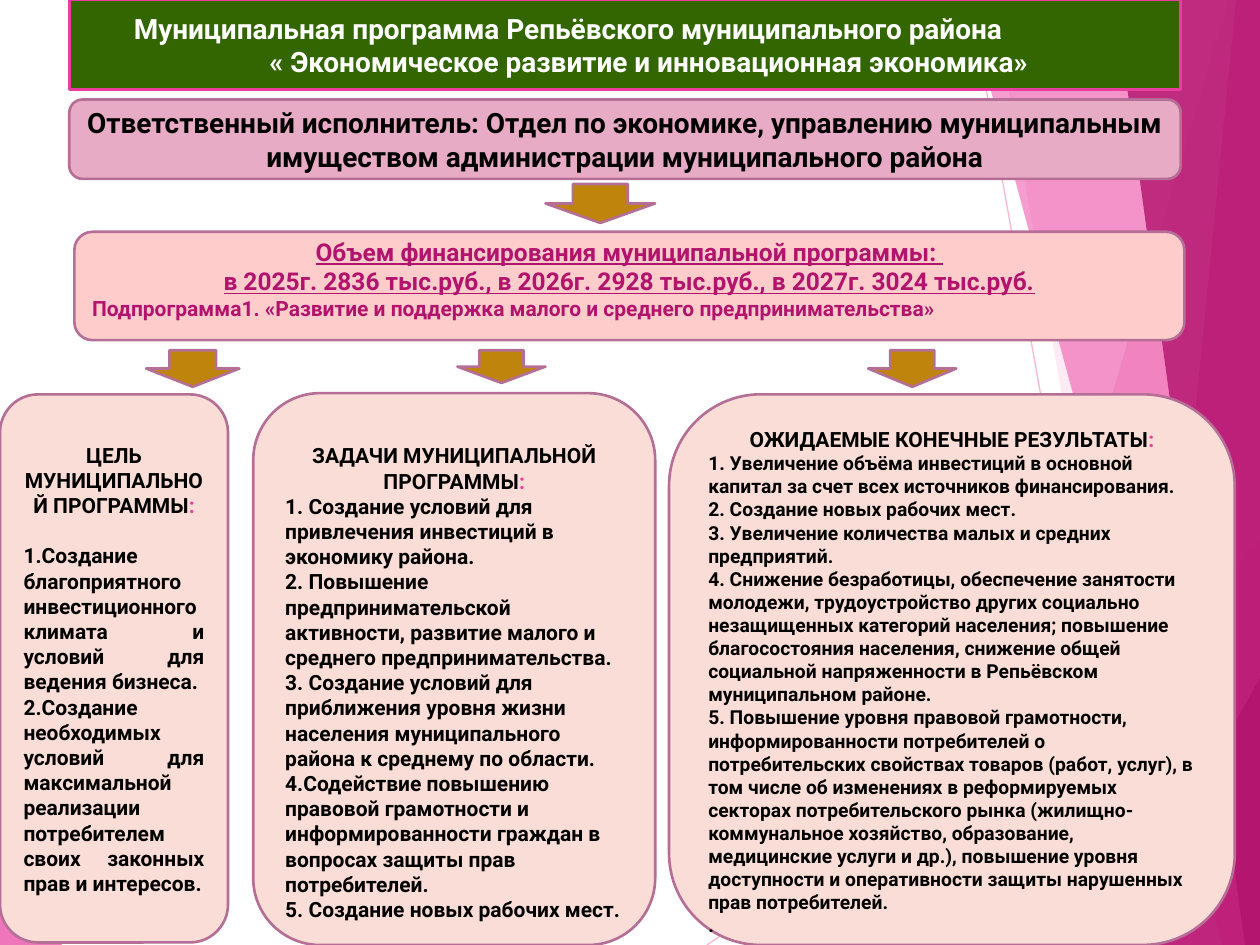
from dataclasses import dataclass, field

from lxml import etree
from pptx import Presentation
from pptx import util as u
from pptx.dml.color import RGBColor
from pptx.enum import shapes, text
from pptx.oxml.ns import qn

FONT = "Roboto"
COLORS = {
    "white": "FFFFFF", "black": "000000", "green": "336600",
    "light_pink": "F496CB", "pink": "EB3D9F", "magenta": "B2136D",
    "mauve": "E7ABC5", "border": "B56F96", "rose": "FFCCCC",
    "peach": "FADDD6", "ochre": "BE840B",
}
CENTER, LEFT, JUSTIFY = text.PP_ALIGN.CENTER, text.PP_ALIGN.LEFT, text.PP_ALIGN.JUSTIFY
TOP, MIDDLE = text.MSO_ANCHOR.TOP, text.MSO_ANCHOR.MIDDLE
RECTANGLE, ROUNDED = shapes.MSO_SHAPE.RECTANGLE, shapes.MSO_SHAPE.ROUNDED_RECTANGLE


@dataclass
class Line:
    words: str
    size: float = 12
    color: str = "black"
    align: int = CENTER
    underline: bool = False
    colon: bool = False
    space_after: float = 0
    left_indent: float = 0
    right_indent: float = 0


@dataclass
class Box:
    left: float
    top: float
    width: float
    height: float
    fill: str
    lines: list[Line] = field(default_factory=list)
    kind: int = ROUNDED
    border: str = "border"
    anchor: int = MIDDLE
    margin_top: float = 0.05


@dataclass
class Facet:
    points: list[tuple[float, float]]
    color: str
    opacity: int


FACETS = [
    Facet([(9.75, 0), (7.54, 7.5), (10, 7.5), (10, 0)], "light_pink", 36),
    Facet([(7.88, 0), (9.19, 7.5), (10, 7.5), (10, 0)], "light_pink", 20),
    Facet([(7.26, 7.5), (10, 4.29), (10, 7.5)], "light_pink", 72),
    Facet([(7.67, 0), (9.7, 7.5), (10, 7.5), (10, 0)], "pink", 50),
    Facet([(9.81, 0), (9.07, 7.5), (10, 7.5), (10, 0)], "pink", 66),
    Facet([(8.85, 0), (9.88, 7.5), (10, 7.5), (10, 0)], "magenta", 80),
    Facet([(8.82, 7.5), (10, 5.38), (10, 7.5)], "magenta", 76),
    Facet([(0, 4.39), (0.49, 7.5), (0, 7.5)], "pink", 70),
]
RAYS = [((5.61, 7.5), (10, 4.57)), ((7.7, 0), (9.04, 7.5))]
ARROWS = [
    Box(4.33, 1.46, 0.87, 0.31, "ochre", kind=shapes.MSO_SHAPE.DOWN_ARROW),
    Box(1.16, 2.78, 0.74, 0.29, "ochre", kind=shapes.MSO_SHAPE.DOWN_ARROW),
    Box(3.63, 2.78, 0.7, 0.26, "ochre", kind=shapes.MSO_SHAPE.DOWN_ARROW),
    Box(6.89, 2.78, 0.7, 0.29, "ochre", kind=shapes.MSO_SHAPE.DOWN_ARROW),
]

GOALS = [
    "1.Создание благоприятного инвестиционного климата и условий для ведения бизнеса.",
    "2.Создание необходимых условий для максимальной реализации потребителем своих законных прав и интересов.",
]
TASKS = [
    "1. Создание условий для привлечения инвестиций в экономику района.",
    "2. Повышение предпринимательской активности, развитие малого и среднего предпринимательства.",
    "3. Создание условий для приближения уровня жизни населения муниципального района к среднему по области.",
    "4.Содействие повышению правовой грамотности и информированности граждан в вопросах защиты прав потребителей.",
    "5. Создание новых рабочих мест.",
]
RESULTS = [
    "1. Увеличение объёма инвестиций в основной капитал за счет всех источников финансирования.",
    "2. Создание новых рабочих мест.",
    "3. Увеличение количества малых и средних предприятий.",
    "4. Снижение безработицы, обеспечение занятости молодежи, трудоустройство других социально "
    "незащищенных категорий населения; повышение благосостояния населения, снижение общей "
    "социальной напряженности в Репьёвском муниципальном районе.",
    "5. Повышение уровня правовой грамотности, информированности потребителей о потребительских "
    "свойствах товаров (работ, услуг), в том числе об изменениях в реформируемых секторах "
    "потребительского рынка (жилищно-коммунальное хозяйство, образование, медицинские услуги и др.), "
    "повышение уровня доступности и оперативности защиты нарушенных прав потребителей.",
    ".",
]


def column_lines(heading: str, items: list[str], size: float = 12,
                 align: int = LEFT, gap: float = 0) -> list[Line]:
    return [Line(heading, colon=True, space_after=gap)] + [Line(item, size, align=align) for item in items]


BOXES = [
    Box(0.55, 0, 8.82, 0.71, "green", [
        Line("Муниципальная программа Репьёвского муниципального района", 16, "white", right_indent=0.9),
        Line("« Экономическое развитие и инновационная экономика»", 16, "white", left_indent=0.38),
    ], RECTANGLE, "pink"),
    Box(0.55, 0.79, 8.82, 0.63, "mauve", [
        Line("Ответственный исполнитель: Отдел по экономике, управлению муниципальным "
             "имуществом администрации муниципального района", 16),
    ]),
    Box(0.59, 1.84, 8.81, 0.86, "rose", [
        Line("Объем финансирования муниципальной программы: ", 14, "magenta", underline=True),
        Line("в 2025г. 2836 тыс.руб., в 2026г. 2928 тыс.руб., в 2027г. 3024 тыс.руб.",
             14, "magenta", underline=True),
        Line("Подпрограмма1. «Развитие и поддержка малого и среднего предпринимательства»",
             12, "magenta", LEFT),
    ], anchor=TOP, margin_top=0),
    Box(0, 3.13, 1.81, 4.35, "peach",
        column_lines("ЦЕЛЬ МУНИЦИПАЛЬНОЙ ПРОГРАММЫ", GOALS, align=JUSTIFY, gap=14.4),
        anchor=TOP, margin_top=0.29),
    Box(2.01, 3.12, 3.19, 4.38, "peach", column_lines("ЗАДАЧИ МУНИЦИПАЛЬНОЙ ПРОГРАММЫ", TASKS),
        anchor=TOP, margin_top=0.24),
    Box(5.31, 3.13, 4.49, 4.37, "peach", column_lines("ОЖИДАЕМЫЕ КОНЕЧНЫЕ РЕЗУЛЬТАТЫ", RESULTS, 11),
        anchor=TOP, margin_top=0.04),
]


def rgb(name: str) -> RGBColor:
    return RGBColor.from_string(COLORS[name])


def set_opacity(element, percent: int) -> None:
    color = next(element.iter(qn("a:srgbClr")))
    etree.SubElement(color, qn("a:alpha")).set("val", str(percent * 1000))


def draw_ray(slide, start: tuple, end: tuple) -> None:
    ray = slide.shapes.add_connector(
        shapes.MSO_CONNECTOR.STRAIGHT, *(u.Inches(value) for value in start + end))
    ray.line.color.rgb = rgb("light_pink")
    ray.line.width = u.Pt(0.75)
    properties = ray._element.spPr
    set_opacity(properties, 70)
    etree.SubElement(properties, qn("a:effectLst"))


def draw_facet(slide, facet: Facet) -> None:
    start, *rest = [(u.Inches(x), u.Inches(y)) for x, y in facet.points]
    builder = slide.shapes.build_freeform(*start)
    builder.add_line_segments(rest, close=True)
    shape = builder.convert_to_shape()
    shape.shadow.inherit = False
    shape.fill.solid()
    shape.fill.fore_color.rgb = rgb(facet.color)
    set_opacity(shape._element.spPr, facet.opacity)
    shape.line.fill.background()


def add_run(paragraph, words: str, line: Line, color: str) -> None:
    run = paragraph.add_run()
    run.text = words
    formats = {"name": FONT, "size": u.Pt(line.size), "bold": True, "underline": line.underline}
    for attribute, value in formats.items():
        setattr(run.font, attribute, value)
    run.font.color.rgb = rgb(color)


def write_line(paragraph, line: Line) -> None:
    paragraph.alignment = line.align
    paragraph.space_after = u.Pt(line.space_after)
    properties = paragraph._p.get_or_add_pPr()
    properties.set("marL", str(u.Inches(line.left_indent)))
    properties.set("marR", str(u.Inches(line.right_indent)))
    add_run(paragraph, line.words, line, line.color)
    if line.colon:
        add_run(paragraph, ":", line, "pink")


def draw_box(slide, box: Box) -> None:
    place = (u.Inches(value) for value in (box.left, box.top, box.width, box.height))
    shape = slide.shapes.add_shape(box.kind, *place)
    shape.shadow.inherit = False
    shape.fill.solid()
    shape.fill.fore_color.rgb = rgb(box.fill)
    shape.line.color.rgb = rgb(box.border)
    shape.line.width = u.Pt(1.5)
    frame = shape.text_frame
    formats = {"word_wrap": True, "vertical_anchor": box.anchor, "margin_top": u.Inches(box.margin_top)}
    for attribute, value in formats.items():
        setattr(frame, attribute, value)
    for index, line in enumerate(box.lines):
        write_line(frame.add_paragraph() if index else frame.paragraphs[0], line)


def main() -> None:
    presentation = Presentation()
    presentation.slide_width, presentation.slide_height = u.Inches(10), u.Inches(7.5)
    slide = presentation.slides.add_slide(presentation.slide_layouts[6])
    for start, end in RAYS:
        draw_ray(slide, start, end)
    for facet in FACETS:
        draw_facet(slide, facet)
    for box in BOXES + ARROWS:
        draw_box(slide, box)
    presentation.save("out.pptx")


if __name__ == "__main__":
    main()
